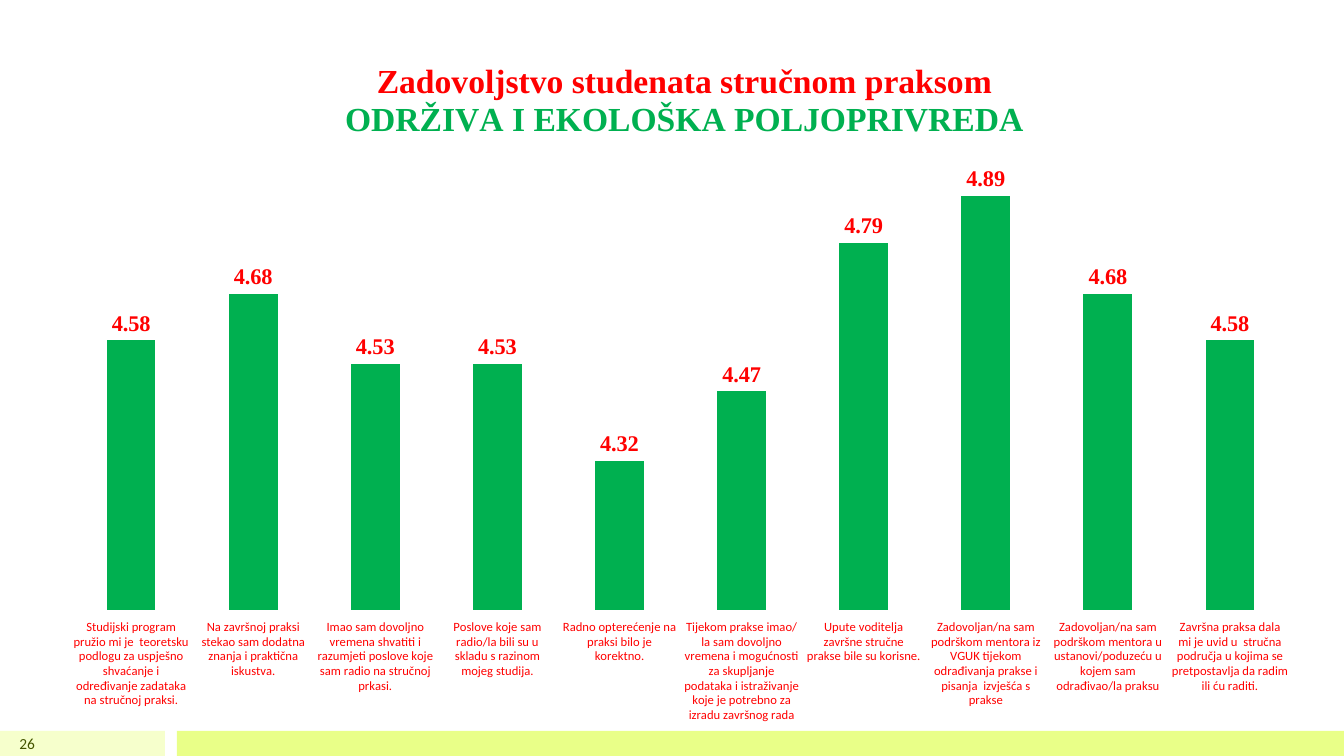
from lxml.etree import SubElement
from pptx import Presentation
from pptx.chart.data import CategoryChartData
from pptx.dml.color import RGBColor
from pptx.enum.chart import XL_CHART_TYPE, XL_LABEL_POSITION, XL_TICK_LABEL_POSITION, XL_TICK_MARK
from pptx.enum.shapes import MSO_SHAPE
from pptx.enum.text import MSO_ANCHOR, PP_ALIGN
from pptx.oxml.ns import qn
from pptx.util import Pt

THEME = {
    "red": "FF0000", "green": "00B050", "olive": "455500", "brown": "4D3E2F",
    "pale": "F6FFCC", "lime": "E9FF88",
    "head": "Times New Roman", "body": "Calibri",
    "title": 24, "value": 16, "page": 11, "base": 10, "label": 9,
}
SCALE = 914400 / 100.8
CHART = (45, 33, 1271, 698)
PLOT = (70, 145, 1221, 465)
TITLE = (342, 58)


def emu(*sizes):
    return [round(px * SCALE) for px in sizes]


def style(font, face, size, color, bold=False):
    font.name, font.size, font.bold = THEME[face], Pt(THEME[size]), bold
    font.color.rgb = RGBColor.from_string(THEME[color])


deck = Presentation()
deck.slide_width, deck.slide_height = emu(1344, 756)
slide = deck.slides.add_slide(deck.slide_layouts[6])

# Footer bands
for left, width, color in ((0, 165, "pale"), (177, 1167, "lime")):
    band = slide.shapes.add_shape(MSO_SHAPE.RECTANGLE, *emu(left, 731, width, 25))
    band.shadow.inherit = False
    band.fill.solid()
    band.fill.fore_color.rgb = RGBColor.from_string(THEME[color])
    band.line.fill.background()

# Page number
page = slide.shapes.add_textbox(*emu(0, 731, 45, 25)).text_frame
page.word_wrap = True
page.margin_top = page.margin_bottom = 0
page.vertical_anchor = MSO_ANCHOR.MIDDLE
page.paragraphs[0].alignment = PP_ALIGN.RIGHT
run = page.paragraphs[0].add_run()
run.text = "26"
style(run.font, "body", "page", "olive")

# Survey scores
scores = [
    ("Studijski program pružio mi je  teoretsku podlogu za uspješno shvaćanje "
     "i određivanje zadataka na stručnoj praksi.", 4.58),
    ("Na završnoj praksi stekao sam dodatna znanja i praktična iskustva.", 4.68),
    ("Imao sam dovoljno vremena shvatiti i razumjeti poslove koje sam radio "
     "na stručnoj prkasi.", 4.53),
    ("Poslove koje sam radio/la bili su u skladu s razinom mojeg studija.", 4.53),
    ("Radno opterećenje na praksi bilo je korektno.", 4.32),
    ("Tijekom prakse imao/la sam dovoljno vremena i mogućnosti za skupljanje "
     "podataka i istraživanje koje je potrebno za izradu završnog rada", 4.47),
    ("Upute voditelja završne stručne prakse bile su korisne.", 4.79),
    ("Zadovoljan/na sam podrškom mentora iz VGUK tijekom odrađivanja prakse "
     "i pisanja  izvješća s prakse", 4.89),
    ("Zadovoljan/na sam podrškom mentora u ustanovi/poduzeću u kojem sam "
     "odrađivao/la praksu", 4.68),
    ("Završna praksa dala mi je uvid u  stručna područja u kojima se "
     "pretpostavlja da radim ili ću raditi.", 4.58),
]
data = CategoryChartData(number_format="0.00")
data.categories = [text for text, score in scores]
data.add_series("Series 1", [score for text, score in scores])
chart = slide.shapes.add_chart(XL_CHART_TYPE.COLUMN_CLUSTERED, *emu(*CHART), data).chart
chart.has_legend = False
style(chart.font, "body", "base", "brown")

# Chart title
chart.has_title = True
frame = chart.chart_title.text_frame
lines = (("Zadovoljstvo studenata stručnom praksom", "red"),
         ("ODRŽIVA I EKOLOŠKA POLJOPRIVREDA", "green"))
for i, (text, color) in enumerate(lines):
    para = frame.add_paragraph() if i else frame.paragraphs[0]
    para.alignment = PP_ALIGN.CENTER
    run = para.add_run()
    run.text = text
    style(run.font, "head", "title", color, True)

# Columns and their values
plot = chart.plots[0]
plot.gap_width = 150
plot.vary_by_categories = False
fill = plot.series[0].format.fill
fill.solid()
fill.fore_color.rgb = RGBColor.from_string(THEME["green"])
plot.has_data_labels = True
labels = plot.data_labels
labels.show_value = True
labels.number_format, labels.number_format_is_linked = "0.00", False
labels.position = XL_LABEL_POSITION.OUTSIDE_END
style(labels.font, "head", "value", "red", True)

# Axes
questions, scale = chart.category_axis, chart.value_axis
questions.major_tick_mark = XL_TICK_MARK.NONE
questions.tick_label_position = XL_TICK_LABEL_POSITION.LOW
questions.format.line.fill.background()
style(questions.tick_labels.font, "body", "label", "red")
scale.minimum_scale, scale.maximum_scale = 4, 5
scale.has_major_gridlines = False
scale.visible = False

# Fixed places of title and plot inside the chart
area = chart.plots[0]._element.getparent()
for owner, box in ((chart.chart_title._element, TITLE), (area, PLOT)):
    layout = owner.find(qn("c:layout"))
    if layout is None:
        layout = SubElement(owner, qn("c:layout"))
        owner.insert(0 if owner is area else 1, layout)
    manual = SubElement(layout, qn("c:manualLayout"))
    if owner is area:
        SubElement(manual, qn("c:layoutTarget")).set("val", "inner")
    for key in ("xMode", "yMode"):
        SubElement(manual, qn("c:" + key)).set("val", "edge")
    shares = [(box[0] - CHART[0]) / CHART[2], (box[1] - CHART[1]) / CHART[3]]
    shares += [px / full for px, full in zip(box[2:], CHART[2:])]
    for key, share in zip("xywh", shares):
        SubElement(manual, qn("c:" + key)).set("val", f"{share:.4f}")

deck.save("out.pptx")
